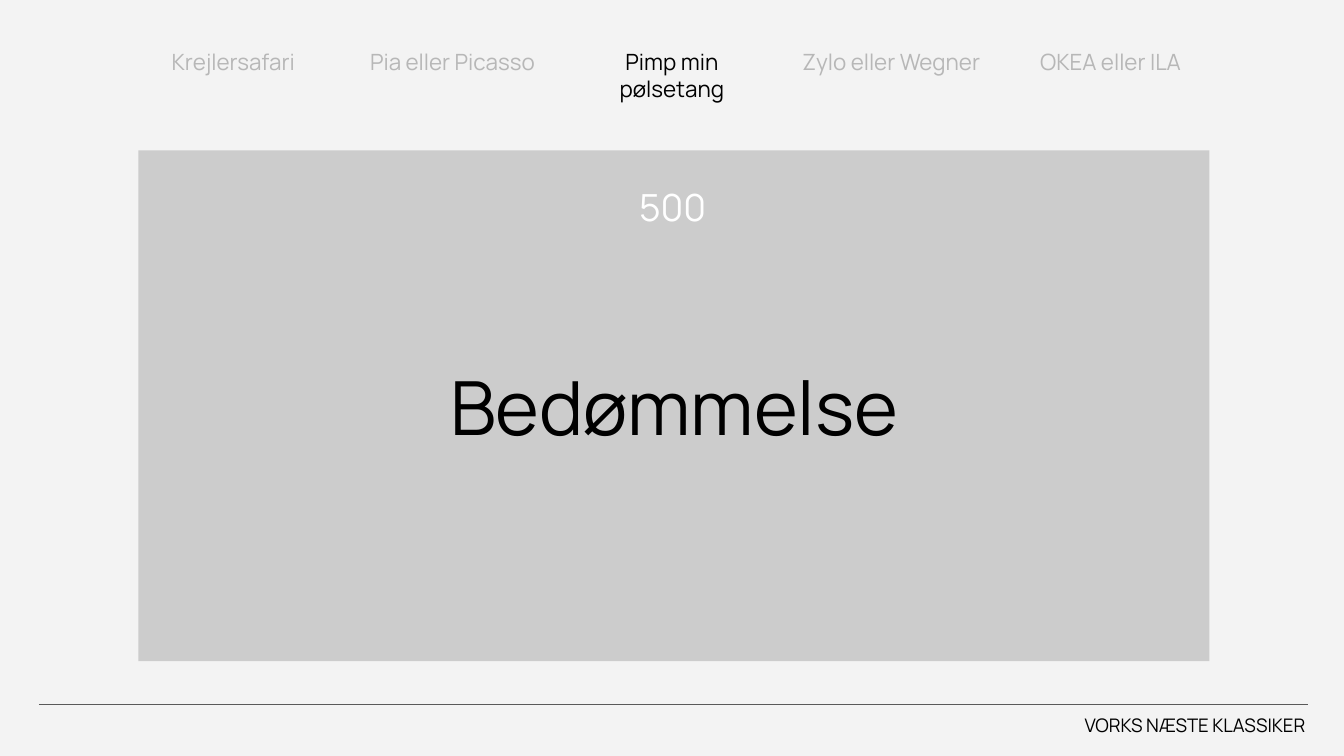
from lxml import etree
from pptx import Presentation
from pptx.dml.color import RGBColor
from pptx.enum import shapes, text
from pptx.oxml.ns import qn
from pptx.util import Inches, Pt

FONT = "Manrope"
PAPER = RGBColor(0xF3, 0xF3, 0xF3)
PANEL = RGBColor(0xCC, 0xCC, 0xCC)
MUTED = RGBColor(0xB7, 0xB7, 0xB7)
RULE = RGBColor(0x59, 0x59, 0x59)
BLACK = RGBColor(0, 0, 0)
WHITE = RGBColor(0xFF, 0xFF, 0xFF)

TOPICS = ["Krejlersafari", "Pia eller Picasso", "Pimp min pølsetang",
          "Zylo eller Wegner", "OKEA eller ILA"]
ACTIVE = 2


def write(shape, words, size=12, color=BLACK, align=text.PP_ALIGN.CENTER,
          anchor=text.MSO_ANCHOR.TOP):
    """Put formatted words in a shape."""
    frame = shape.text_frame
    frame.word_wrap = True
    frame.vertical_anchor = anchor
    frame.margin_left = frame.margin_right = Inches(0.1)
    frame.margin_top = frame.margin_bottom = Inches(0.1)
    para = frame.paragraphs[0]
    para.alignment = align
    run = para.add_run()
    run.text = words
    run.font.name = FONT
    run.font.size = Pt(size)
    run.font.color.rgb = color


def label(slide, words, left, top, width, height, **form):
    """Add a text box with formatted words."""
    box = slide.shapes.add_textbox(
        Inches(left), Inches(top), Inches(width), Inches(height))
    write(box, words, **form)


def topics(slide, left, top, width, height):
    """Spread the topics evenly and darken the active one."""
    step = width / len(TOPICS)
    for i, name in enumerate(TOPICS):
        label(slide, name, left + i * step, top, step, height,
              color=BLACK if i == ACTIVE else MUTED)


def card(slide, left, top, width, height):
    """Draw the question panel with its points and title."""
    panel = slide.shapes.add_shape(
        shapes.MSO_SHAPE.RECTANGLE,
        Inches(left), Inches(top), Inches(width), Inches(height))
    panel.shadow.inherit = False
    panel.fill.solid()
    panel.fill.fore_color.rgb = PANEL
    panel.line.fill.background()
    write(panel, "Bedømmelse", size=40, anchor=text.MSO_ANCHOR.MIDDLE)
    label(slide, "500", left + 3.16, top + 0.15, 1.63, 0.54,
          size=20, color=WHITE)


def footer(slide, left, top, width, height):
    """Draw the bottom rule and the show name."""
    label(slide, "VORKS NÆSTE KLASSIKER", left + 2.64, top - 0.01,
          width - 2.56, height, size=10, align=text.PP_ALIGN.RIGHT)
    rule = slide.shapes.add_connector(
        shapes.MSO_CONNECTOR.STRAIGHT,
        Inches(left), Inches(top), Inches(left + width), Inches(top))
    rule.line.color.rgb = RULE
    rule.line.width = Pt(0.75)
    etree.SubElement(rule._element.spPr, qn("a:effectLst"))


def main():
    """Build and save the slide."""
    deck = Presentation()
    deck.slide_width = Inches(10)
    deck.slide_height = deck.slide_width * 9 // 16
    slide = deck.slides.add_slide(deck.slide_layouts[6])
    slide.background.fill.solid()
    slide.background.fill.fore_color.rgb = PAPER
    footer(slide, 0.29, 5.24, 9.44, 0.37)
    card(slide, 1.03, 1.12, 7.97, 3.8)
    topics(slide, 0.92, 0.26, 8.16, 0.61)
    deck.save("out.pptx")


if __name__ == "__main__":
    main()
